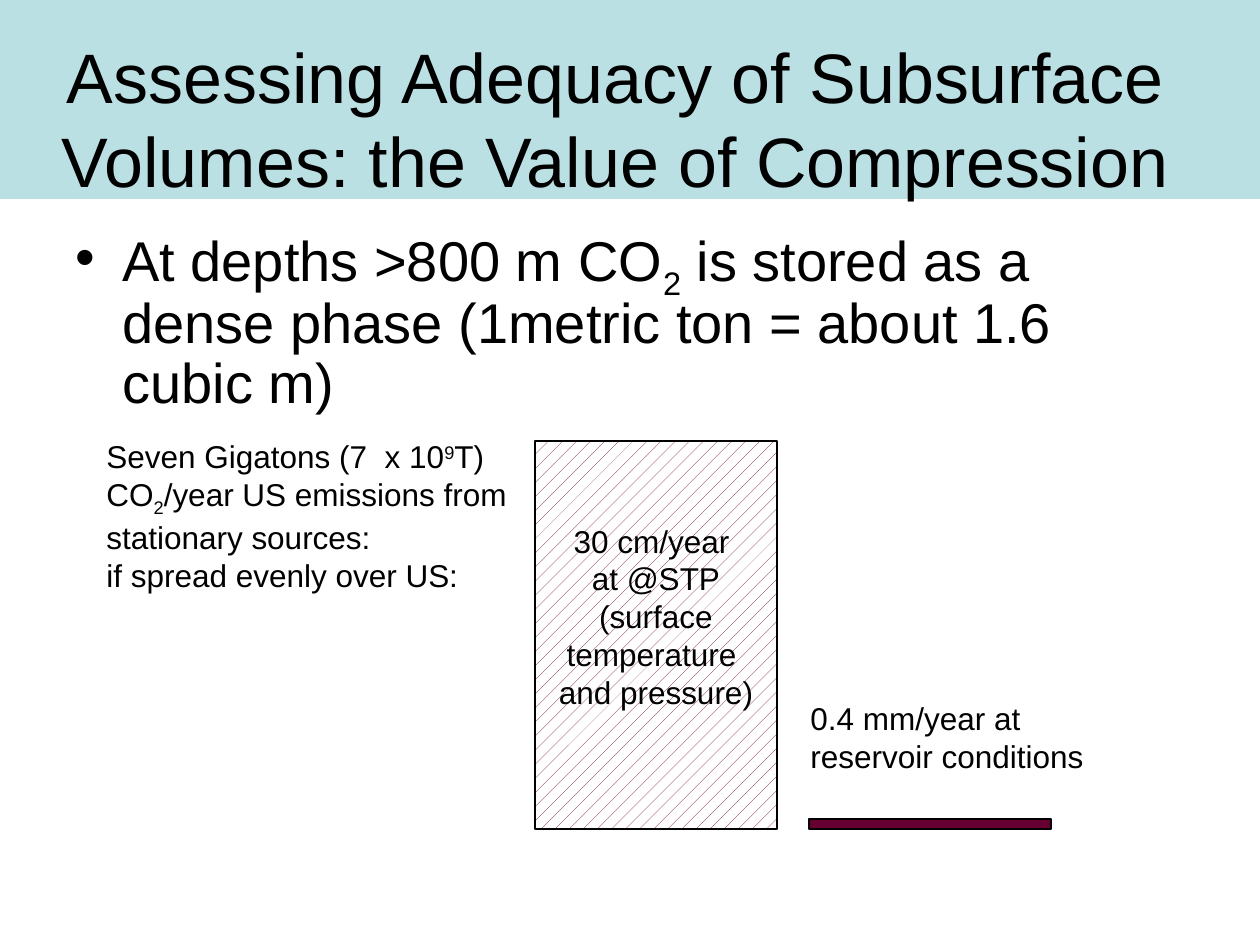
from lxml import etree
from pptx import Presentation
from pptx import util as u
from pptx.dml import color
from pptx.enum import dml, shapes, text
from pptx.oxml import ns

PX = 914400 / 126
BLACK, WHITE, BAND, MAROON = "000000", "FFFFFF", "BBE0E3", "660033"
SUB, SUPER = -25000, 30000


def px(value):
    return u.Emu(round(value * PX))


def rgb(value):
    return color.RGBColor.from_string(value)


def set_values(target, values):
    for name, value in values.items():
        setattr(target, name, value)


def write_text(shape, paragraphs, size, paragraph_format=None, **frame_format):
    """Fill a shape with paragraphs, each a list of (text, baseline) runs."""
    frame = shape.text_frame
    set_values(frame, {"word_wrap": True, **frame_format})
    for index, runs in enumerate(paragraphs):
        paragraph = frame.paragraphs[0] if index == 0 else frame.add_paragraph()
        set_values(paragraph, {"alignment": text.PP_ALIGN.LEFT, **(paragraph_format or {})})
        for words, baseline in runs:
            run = paragraph.add_run()
            run.text = words
            set_values(run.font, {"name": "Arial", "size": u.Pt(size)})
            run.font.color.rgb = rgb(BLACK)
            if baseline:
                run.font._element.set("baseline", str(baseline))


def add_text(slide, box, paragraphs, size, paragraph_format=None, **frame_format):
    shape = slide.shapes.add_textbox(*map(px, box))
    write_text(shape, paragraphs, size, paragraph_format, **frame_format)
    return shape


def add_rectangle(slide, box, fill, outline=None, pattern=None):
    shape = slide.shapes.add_shape(shapes.MSO_SHAPE.RECTANGLE, *map(px, box))
    shape.shadow.inherit = False
    if pattern:
        shape.fill.patterned()
        shape.fill.pattern = pattern
        shape.fill.back_color.rgb = rgb(WHITE)
    else:
        shape.fill.solid()
    shape.fill.fore_color.rgb = rgb(fill)
    if outline:
        shape.line.color.rgb = rgb(outline)
        shape.line.width = u.Pt(0.75)
    else:
        shape.line.fill.background()
    return shape


def add_bullet(paragraph, indent):
    properties = paragraph._p.get_or_add_pPr()
    properties.set("marL", str(px(indent)))
    properties.set("indent", str(-px(indent)))
    etree.SubElement(properties, ns.qn("a:buFont")).set("typeface", "Arial")
    etree.SubElement(properties, ns.qn("a:buChar")).set("char", "•")


def plain(*lines):
    return [[(line, 0)] for line in lines]


def main():
    presentation = Presentation()
    presentation.slide_width, presentation.slide_height = px(1260), px(945)
    slide = presentation.slides.add_slide(presentation.slide_layouts[6])
    centred = {"alignment": text.PP_ALIGN.CENTER}
    middle = text.MSO_ANCHOR.MIDDLE
    grow = text.MSO_AUTO_SIZE.SHAPE_TO_FIT_TEXT

    # Title on its band
    add_rectangle(slide, (0, 0, 1260, 199), BAND)
    title = "Assessing Adequacy of Subsurface Volumes: the Value of Compression"
    add_text(slide, (32, 38, 1166, 158), plain(title), 40, centred, vertical_anchor=middle)

    # Bulleted statement
    statement = [("At depths >800 m CO", 0), ("2", SUB),
                 (" is stored as a dense phase (1metric ton = about 1.6 cubic m)", 0)]
    body = add_text(slide, (63, 220, 1134, 210), [statement], 32,
                    {"line_spacing": 0.9, "space_before": u.Pt(6.4)})
    add_bullet(body.text_frame.paragraphs[0], 47)

    # Volume at the surface, its label sitting above the middle
    surface = add_rectangle(slide, (535, 441, 242, 388), MAROON, BLACK,
                            dml.MSO_PATTERN.PERCENT_10)
    write_text(surface, plain("30 cm/year ", "at @STP", "(surface", "temperature ", "and pressure)"),
               18, centred, word_wrap=False, vertical_anchor=middle, margin_bottom=px(44))

    # Emissions being compared
    emissions = [("Seven Gigatons (7  x 10", 0), ("9", SUPER), ("T) CO", 0), ("2", SUB),
                 ("/year US emissions from stationary sources:", 0)]
    add_text(slide, (94, 431, 431, 258), [emissions, *plain("if spread evenly over US:")], 18,
             auto_size=grow)

    # Volume in the reservoir
    add_rectangle(slide, (809, 819, 242, 10), MAROON, BLACK)
    add_text(slide, (798, 693, 299, 88), plain("0.4 mm/year at", "reservoir conditions"), 18,
             word_wrap=False, auto_size=grow)

    presentation.save("out.pptx")


if __name__ == "__main__":
    main()
